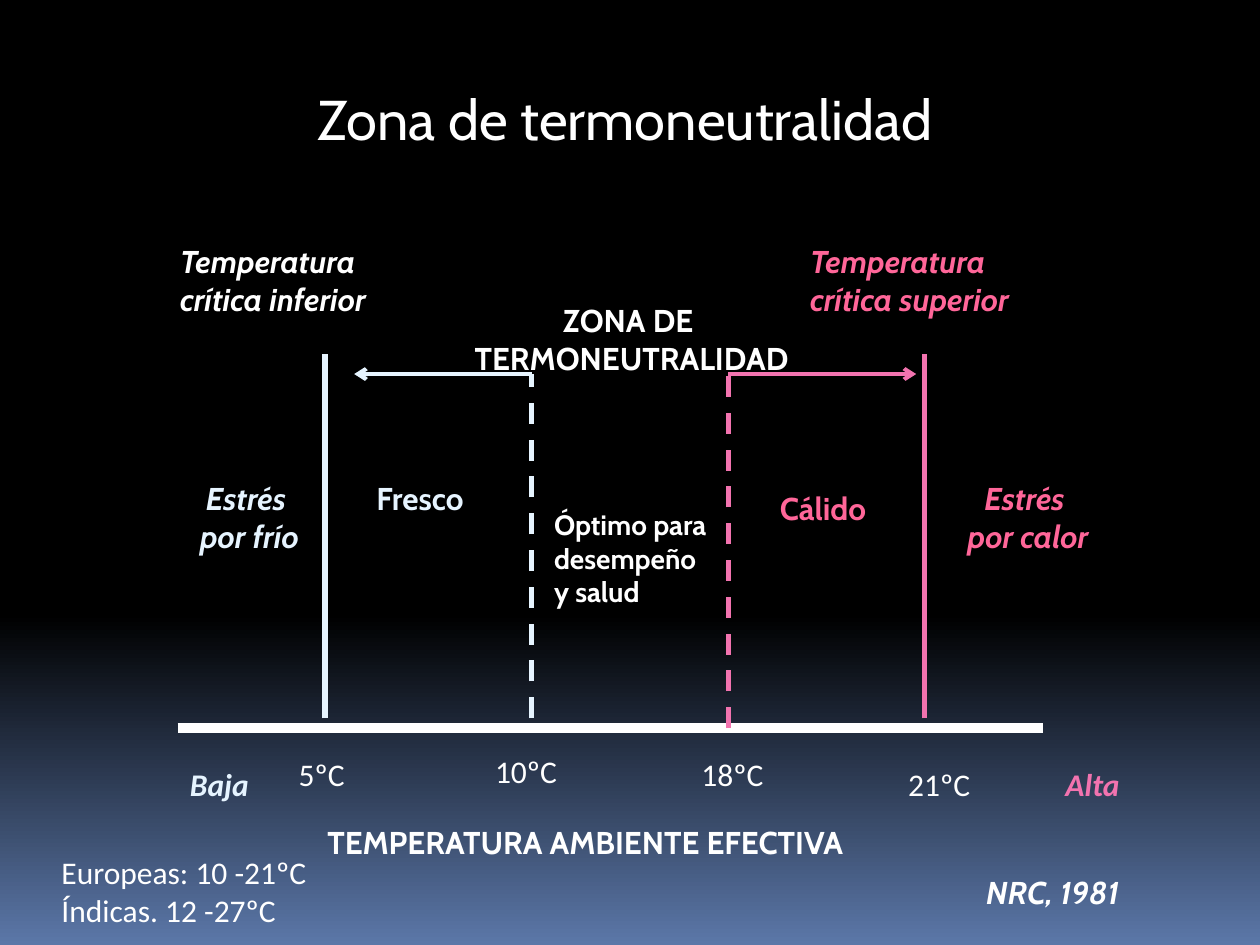
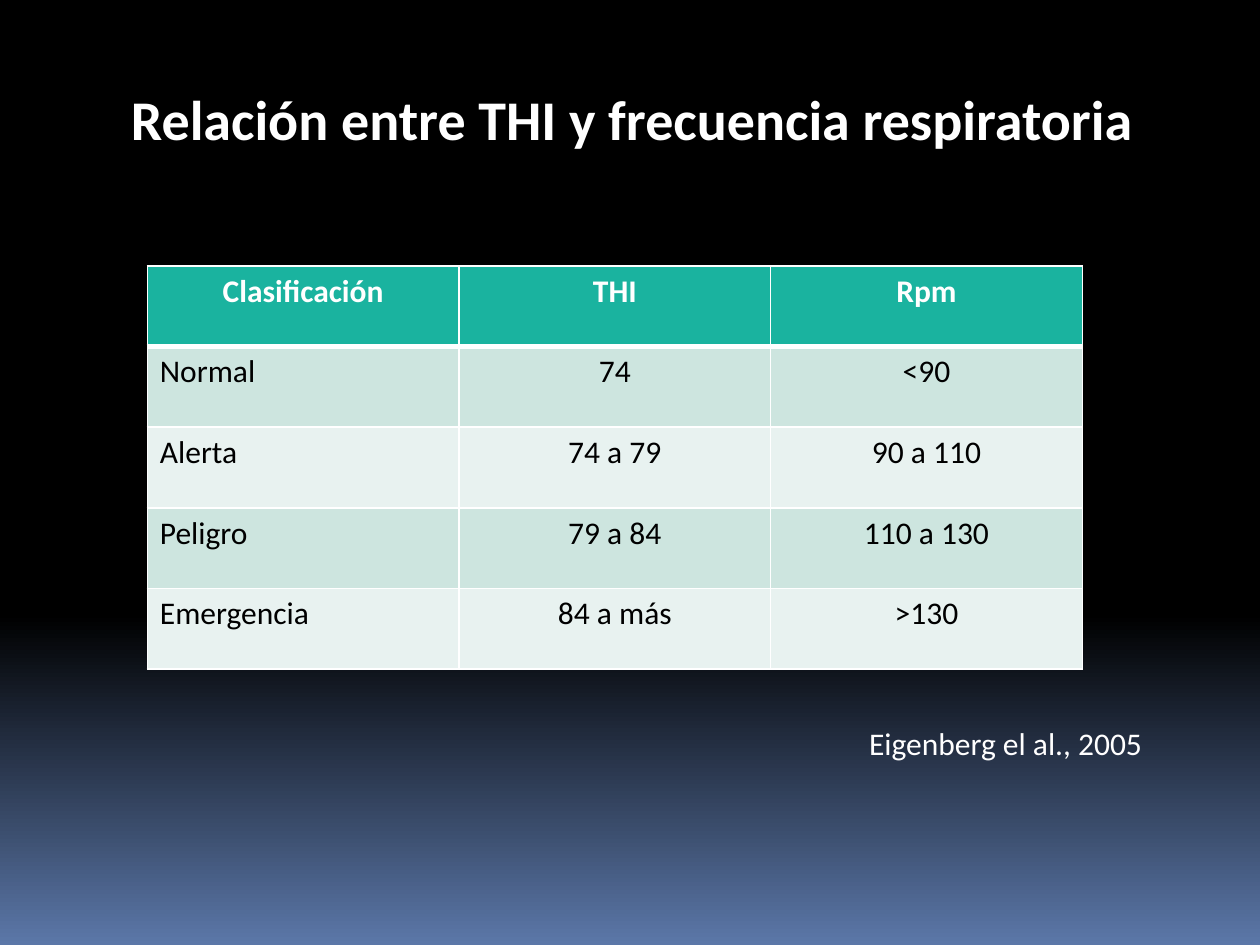
from dataclasses import dataclass

from lxml.etree import SubElement
from pptx import Presentation
from pptx.dml.color import RGBColor
from pptx.enum.dml import MSO_LINE
from pptx.enum.shapes import MSO_CONNECTOR
from pptx.enum.text import MSO_AUTO_SIZE, PP_ALIGN
from pptx.oxml.ns import qn
from pptx.slide import Slide
from pptx.table import _Cell
from pptx.util import Cm, Pt


@dataclass(frozen=True)
class Theme:
    night: str = "000000"
    horizon: str = "5B77A8"
    white: str = "FFFFFF"
    cold: str = "E6F4FF"
    hot_text: str = "FF6699"
    hot_line: str = "F273AF"
    header: str = "1AB39F"
    bands: tuple[str, str] = ("CDE5DF", "E8F2F0")
    cell_text: str = "000000"
    display: str = "Cabin"
    body: str = "Calibri"
    title_size: int = 32
    text_size: int = 18
    small_size: int = 16


THEME = Theme()


@dataclass(frozen=True)
class Label:
    """Text box; lengths in centimetres."""
    text: str
    left: float
    top: float
    width: float
    height: float = 1.02
    color: str = THEME.white
    font: str = THEME.body
    size: int = THEME.text_size
    bold: bool = False
    italic: bool = False
    centered: bool = False
    wrap: bool = False


@dataclass(frozen=True)
class Rule:
    """Straight line; lengths in centimetres, weight in points."""
    start: tuple[float, float]
    end: tuple[float, float]
    color: str
    weight: float = 3
    dashed: bool = False
    arrow: bool = False


def rgb(color: str) -> RGBColor:
    return RGBColor.from_string(color)


def new_slide(prs: Presentation) -> Slide:
    slide = prs.slides.add_slide(prs.slide_layouts[6])
    fill = slide.background.fill
    fill.gradient()
    fill.gradient_angle = 270
    stops = ((0.65, THEME.night), (1.0, THEME.horizon))
    for stop, (position, color) in zip(fill.gradient_stops, stops):
        stop.position = position
        stop.color.rgb = rgb(color)
    return slide


def style_text(frame, color: str, font: str, size: int, bold: bool,
               italic: bool, centered: bool) -> None:
    for paragraph in frame.paragraphs:
        paragraph.alignment = PP_ALIGN.CENTER if centered else PP_ALIGN.LEFT
        paragraph.font.name = font
        paragraph.font.size = Pt(size)
        paragraph.font.bold = bold
        paragraph.font.italic = italic
        paragraph.font.color.rgb = rgb(color)


def draw_label(slide: Slide, label: Label) -> None:
    box = slide.shapes.add_textbox(
        Cm(label.left), Cm(label.top), Cm(label.width), Cm(label.height))
    frame = box.text_frame
    frame.text = label.text
    frame.word_wrap = label.wrap
    frame.auto_size = MSO_AUTO_SIZE.SHAPE_TO_FIT_TEXT
    style_text(frame, label.color, label.font, label.size,
               label.bold, label.italic, label.centered)


def draw_title(slide: Slide, text: str, left: float, width: float,
               font: str, bold: bool = False) -> None:
    draw_label(slide, Label(text, left, 1.57, width, 1.63, font=font,
                            size=THEME.title_size, bold=bold))


def draw_rule(slide: Slide, rule: Rule) -> None:
    connector = slide.shapes.add_connector(
        MSO_CONNECTOR.STRAIGHT,
        *(Cm(length) for length in rule.start + rule.end))
    line = connector.line
    line.color.rgb = rgb(rule.color)
    line.width = Pt(rule.weight)
    if rule.dashed:
        line.dash_style = MSO_LINE.DASH
    if rule.arrow:
        SubElement(line._get_or_add_ln(), qn("a:tailEnd"), type="arrow")
    SubElement(connector._element.spPr, qn("a:effectLst"))


def draw_borders(cell: _Cell, top: float, bottom: float) -> None:
    properties = cell._tc.get_or_add_tcPr()
    for side, weight in (("L", 1), ("R", 1), ("T", top), ("B", bottom)):
        line = SubElement(properties, qn(f"a:ln{side}"), w=str(Pt(weight)))
        fill = SubElement(line, qn("a:solidFill"))
        SubElement(fill, qn("a:srgbClr"), val=THEME.white)


def build_thermoneutral_zone(prs: Presentation) -> None:
    slide = new_slide(prs)
    draw_title(slide, "Zona de termoneutralidad", 6.15, 13.51, THEME.display)

    # Temperature limits along the axis, and the heights they share
    lower, cool, warm, upper = 6.55, 10.72, 14.68, 18.64
    axis, foot, arrow_level, limit_top = 14.68, 14.48, 7.54, 7.14
    rules = (
        Rule((3.58, axis), (21.03, axis), THEME.white, weight=6),
        Rule((lower, foot), (lower, limit_top), THEME.cold),
        Rule((upper, foot), (upper, limit_top), THEME.hot_line),
        Rule((cool, foot), (cool, arrow_level), THEME.cold, dashed=True),
        Rule((warm, axis), (warm, arrow_level), THEME.hot_line, dashed=True),
        Rule((cool, arrow_level), (7.14, arrow_level), THEME.cold,
             weight=2.25, arrow=True),
        Rule((warm, arrow_level), (18.47, arrow_level), THEME.hot_line,
             weight=2.25, arrow=True),
    )

    # Zone names
    heading = {"height": 1.8, "font": THEME.display, "bold": True}
    critical = heading | {"italic": True, "wrap": True}
    stress = heading | {"italic": True, "centered": True}
    zone = {"font": THEME.display, "bold": True}
    zone_names = (
        Label("Temperatura\ncrítica inferior", 3.38, 4.75, 5.16, **critical),
        Label("Temperatura\ncrítica superior", 16.08, 4.75, 5.36,
              color=THEME.hot_text, **critical),
        Label("Estrés \npor frío", 3.58, 9.53, 2.9,
              color=THEME.cold, **stress),
        Label("Estrés \npor calor", 19.05, 9.53, 3.35,
              color=THEME.hot_text, **stress),
        Label("ZONA DE \nTERMONEUTRALIDAD", 8.94, 5.94, 7.59,
              centered=True, **heading),
        Label("Fresco", 7.34, 9.53, 2.62, color=THEME.cold, **zone),
        Label("Cálido", 15.47, 9.73, 2.51, color=THEME.hot_text, **zone),
        Label("Óptimo para\ndesempeño\ny salud", 10.92, 10.11, 3.96, 3.0,
              size=THEME.small_size, wrap=True, **zone),
    )

    # Axis values and notes
    scale_end = {"bold": True, "italic": True}
    axis_notes = (
        Label("Baja", 3.58, 15.29, 1.73, color=THEME.cold, **scale_end),
        Label("Alta", 21.23, 15.29, 1.6, color=THEME.hot_line, **scale_end),
        Label("5ºC", 5.77, 15.09, 1.47),
        Label("10ºC", 9.73, 15.04, 1.78, wrap=True),
        Label("18ºC", 13.89, 15.09, 1.78),
        Label("21ºC", 18.06, 15.29, 1.78),
        Label("TEMPERATURA AMBIENTE EFECTIVA", 6.35, 16.46, 12.37, **zone),
        Label("Europeas: 10 -21ºC\nÍndicas. 12 -27ºC", 0.99, 17.07, 5.51, 1.8),
        Label("NRC, 1981", 19.63, 17.48, 3.94, italic=True, **zone),
    )

    for rule in rules:
        draw_rule(slide, rule)
    for label in zone_names + axis_notes:
        draw_label(slide, label)


def build_thi_table(prs: Presentation) -> None:
    slide = new_slide(prs)
    draw_title(slide, "Relación entre THI y frecuencia respiratoria",
               2.39, 21.59, THEME.body, bold=True)

    # Respiratory rate by THI class
    classes = (
        ("Clasificación", "THI", "Rpm"),
        ("Normal", "74", "<90"),
        ("Alerta", "74 a 79", "90 a 110"),
        ("Peligro", "79 a 84", "110 a 130"),
        ("Emergencia", "84 a más", ">130"),
    )
    table = slide.shapes.add_table(
        len(classes), len(classes[0]),
        Cm(2.97), Cm(5.36), Cm(18.85), Cm(8.13)).table
    for row, values in enumerate(classes):
        is_header = row == 0
        fill = THEME.header if is_header else THEME.bands[(row - 1) % 2]
        for column, value in enumerate(values):
            cell = table.cell(row, column)
            cell.text = value
            draw_borders(cell, top=3 if row == 1 else 1,
                         bottom=3 if is_header else 1)
            cell.fill.solid()
            cell.fill.fore_color.rgb = rgb(fill)
            style_text(cell.text_frame,
                       THEME.white if is_header else THEME.cell_text,
                       THEME.body, THEME.text_size, bold=is_header,
                       italic=False, centered=is_header or column > 0)

    # Reference
    draw_label(slide, Label("Eigenberg el al., 2005", 17.27, 14.48, 6.17))


def main() -> None:
    prs = Presentation()
    prs.slide_width, prs.slide_height = Cm(25.4), Cm(19.05)
    build_thermoneutral_zone(prs)
    build_thi_table(prs)
    prs.save("out.pptx")


if __name__ == "__main__":
    main()
